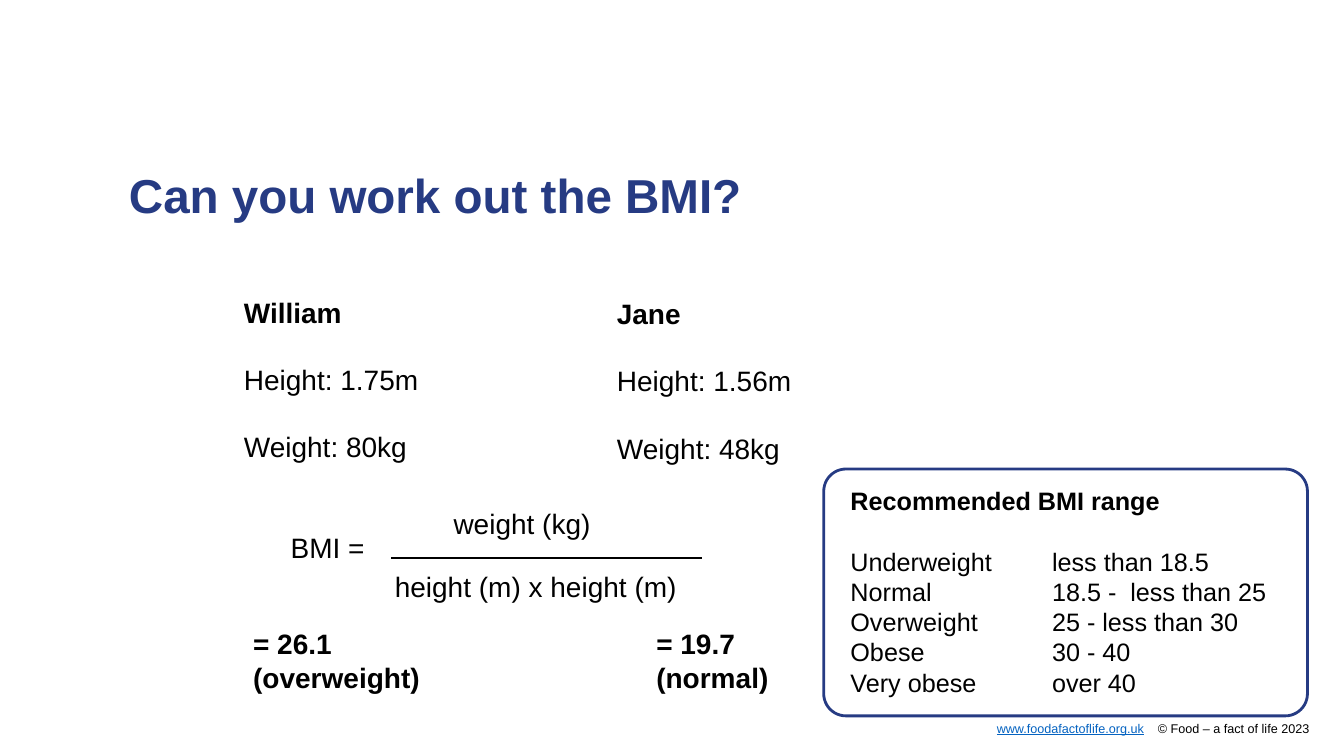
from dataclasses import dataclass

from lxml.etree import SubElement
from pptx import Presentation
from pptx.dml.color import RGBColor
from pptx.enum.shapes import MSO_CONNECTOR, MSO_SHAPE
from pptx.enum.text import MSO_ANCHOR, MSO_AUTO_SIZE, PP_ALIGN
from pptx.oxml.ns import qn
from pptx.slide import Slide
from pptx.text.text import TextFrame
from pptx.util import Cm, Pt


@dataclass(frozen=True)
class Theme:
    font: str = "Arial"
    navy: RGBColor = RGBColor(0x26, 0x3B, 0x83)
    black: RGBColor = RGBColor(0, 0, 0)
    link: RGBColor = RGBColor(0x05, 0x63, 0xC1)
    title: int = 34
    body: int = 20
    panel: int = 18
    footer: int = 9


@dataclass(frozen=True)
class Area:
    left: float
    top: float
    width: float
    height: float

    def lengths(self) -> tuple[Cm, Cm, Cm, Cm]:
        return Cm(self.left), Cm(self.top), Cm(self.width), Cm(self.height)


@dataclass(frozen=True)
class Line:
    text: str
    bold: bool = False
    before: float = 0
    indent: float = 0


@dataclass(frozen=True)
class TextBlock:
    area: Area
    lines: tuple[Line, ...]
    tab: float = 0
    wrap: bool = True


THEME = Theme()
BODY_GAP = 24

PEOPLE = (
    TextBlock(Area(5.89, 7.31, 6.81, 7.95), (
        Line("William", bold=True),
        Line("Height: 1.75m", before=BODY_GAP),
        Line("Weight: 80kg", before=BODY_GAP),
        Line("BMI =", before=2 * BODY_GAP, indent=1.18),
    )),
    TextBlock(Area(15.29, 7.35, 6.81, 4.52), (
        Line("Jane", bold=True),
        Line("Height: 1.56m", before=BODY_GAP),
        Line("Weight: 48kg", before=BODY_GAP),
    )),
)
FORMULA_AND_RESULTS = (
    TextBlock(Area(11.18, 12.63, 3.99, 1.12), (Line("weight (kg)"),), wrap=False),
    TextBlock(Area(9.7, 14.22, 7.67, 1.12), (Line("height (m) x height (m)"),), wrap=False),
    TextBlock(Area(6.13, 15.67, 16.94, 1.96), (
        Line("= 26.1\t= 19.7", bold=True),
        Line("(overweight)\t(normal)", bold=True),
    ), tab=10.16),
)
RANGES = TextBlock(Area(20.76, 11.82, 12.19, 6.22), (
    Line("Recommended BMI range", bold=True),
    Line("Underweight\tless than 18.5", before=21.6),
    Line("Normal\t18.5 -  less than 25"),
    Line("Overweight\t25 - less than 30"),
    Line("Obese\t30 - 40"),
    Line("Very obese\tover 40"),
), tab=5.08)


def set_margins(frame: TextFrame, across: float, down: float) -> None:
    frame.margin_left = frame.margin_right = Cm(across)
    frame.margin_top = frame.margin_bottom = Cm(down)


def style(span, size: int, color: RGBColor, bold: bool = False) -> None:
    span.font.name = THEME.font
    span.font.size = Pt(size)
    span.font.color.rgb = color
    span.font.bold = bold


def add_tab(para, position: float) -> None:
    tabs = SubElement(para._p.get_or_add_pPr(), qn("a:tabLst"))
    SubElement(tabs, qn("a:tab"), pos=str(Cm(position)), algn="l")


def remove_bullet(para, indent: float) -> None:
    properties = para._p.get_or_add_pPr()
    properties.set("marL", str(Cm(indent)))
    properties.set("indent", "0")
    SubElement(properties, qn("a:buNone"))


def fill_text(frame: TextFrame, block: TextBlock, size: int) -> None:
    frame.word_wrap = block.wrap
    frame.auto_size = MSO_AUTO_SIZE.NONE
    frame.vertical_anchor = MSO_ANCHOR.TOP
    frame.text = "\n".join(line.text for line in block.lines)
    for para, line in zip(frame.paragraphs, block.lines):
        para.alignment = PP_ALIGN.LEFT
        para.space_before = Pt(line.before)
        if block.tab:
            add_tab(para, block.tab)
        for span in para.runs:
            style(span, size, THEME.black, line.bold)


def place(shape, area: Area) -> None:
    shape.left, shape.top, shape.width, shape.height = area.lengths()


def add_title(page: Slide) -> None:
    title = page.shapes.title
    place(title, Area(3.25, 4.34, 27, 2.01))
    frame = title.text_frame
    set_margins(frame, 0, 0)
    frame.auto_size = MSO_AUTO_SIZE.NONE
    frame.vertical_anchor = MSO_ANCHOR.TOP
    frame.text = "Can you work out the BMI?"
    para = frame.paragraphs[0]
    para.alignment = PP_ALIGN.LEFT
    para.line_spacing = 0.9
    style(para.runs[0], THEME.title, THEME.navy, bold=True)


def add_people(page: Slide) -> None:
    bodies = list(page.placeholders)[1:]
    for body, person in zip(bodies, PEOPLE):
        place(body, person.area)
        fill_text(body.text_frame, person, THEME.body)
        for para, line in zip(body.text_frame.paragraphs, person.lines):
            remove_bullet(para, line.indent)


def add_fraction_bar(page: Slide) -> None:
    bar = page.shapes.add_connector(
        MSO_CONNECTOR.STRAIGHT, Cm(9.86), Cm(14.07), Cm(17.7), Cm(14.07))
    bar.line.color.rgb = THEME.black
    bar.line.width = Pt(1.5)
    SubElement(bar._element.spPr, qn("a:effectLst"))


def add_range_panel(page: Slide) -> None:
    panel = page.shapes.add_shape(MSO_SHAPE.ROUNDED_RECTANGLE, *RANGES.area.lengths())
    panel.adjustments[0] = 0.09
    panel.shadow.inherit = False
    panel.fill.background()
    panel.line.color.rgb = THEME.navy
    panel.line.width = Pt(2)
    set_margins(panel.text_frame, 0.51, 0.25)
    fill_text(panel.text_frame, RANGES, THEME.panel)


def add_footer(page: Slide) -> None:
    area = Area(25.12, 18.16, 8.1, 0.38)
    frame = page.shapes.add_textbox(*area.lengths()).text_frame
    set_margins(frame, 0, 0)
    frame.word_wrap = True
    frame.text = "www.foodafactoflife.org.uk"
    para = frame.paragraphs[0]
    add_tab(para, 4.06)
    address = para.runs[0]
    style(address, THEME.footer, THEME.link)
    address.font.underline = True
    credit = para.add_run()
    credit.text = "\t© Food – a fact of life 2023"
    style(credit, THEME.footer, THEME.black)


def main() -> None:
    deck = Presentation()
    deck.slide_width, deck.slide_height = Cm(33.87), Cm(19.05)
    two_content = deck.slide_layouts[3]
    page = deck.slides.add_slide(two_content)
    add_title(page)
    add_people(page)
    for block in FORMULA_AND_RESULTS:
        box = page.shapes.add_textbox(*block.area.lengths())
        fill_text(box.text_frame, block, THEME.body)
    add_fraction_bar(page)
    add_range_panel(page)
    add_footer(page)
    deck.save("out.pptx")


if __name__ == "__main__":
    main()
